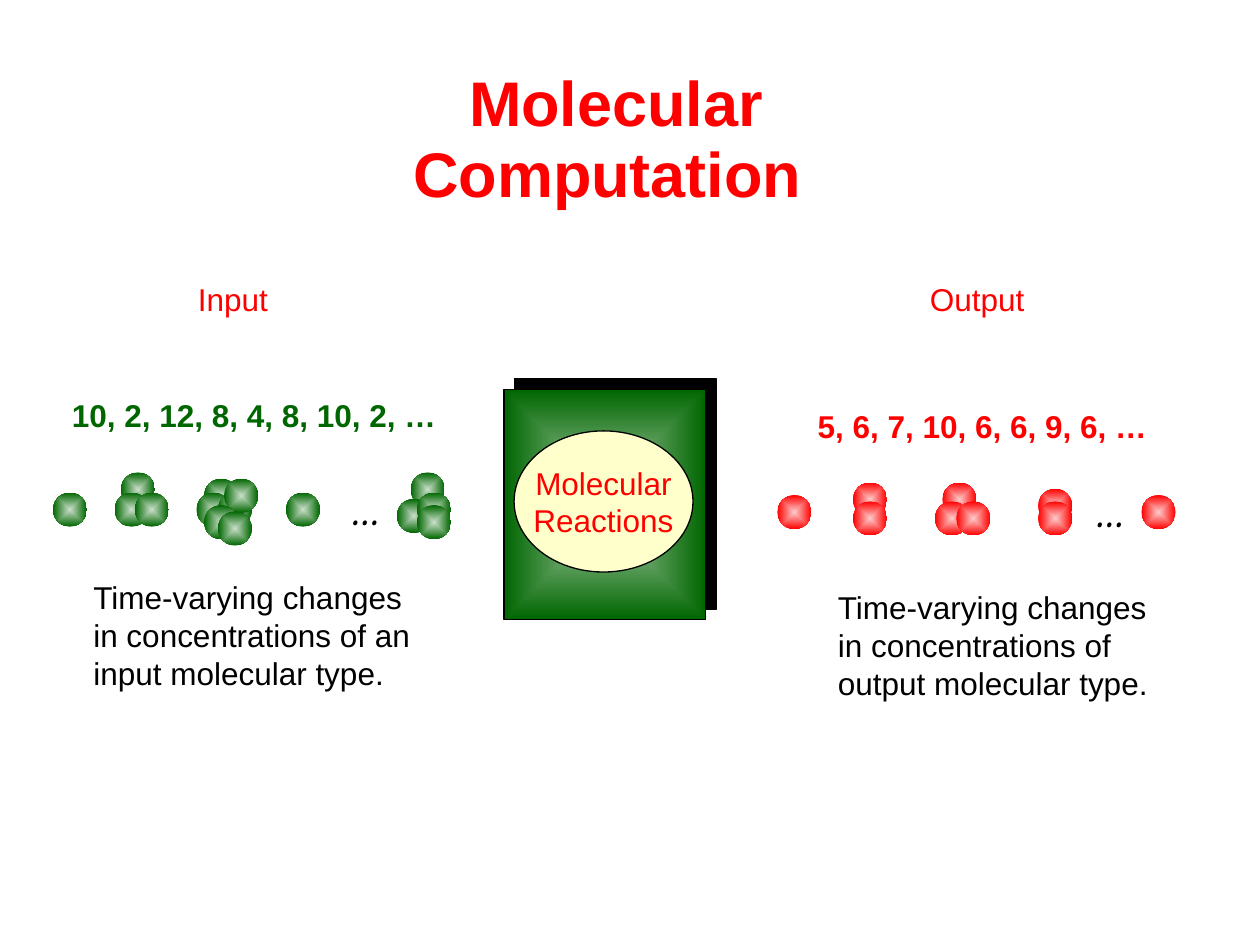
from lxml import etree
from pptx import Presentation
from pptx.dml.color import RGBColor
from pptx.enum.shapes import MSO_SHAPE
from pptx.enum.text import MSO_ANCHOR, PP_ALIGN
from pptx.oxml.ns import qn
from pptx.util import Inches, Pt

OVAL, RECT = MSO_SHAPE.OVAL, MSO_SHAPE.RECTANGLE
TOP, MIDDLE = MSO_ANCHOR.TOP, MSO_ANCHOR.MIDDLE
LEFT, CENTER = PP_ALIGN.LEFT, PP_ALIGN.CENTER

THEME = {
    "red": "FF0000", "green": "006600", "black": "000000", "cream": "FFFFCC",
    "input": ("CBDFCB", "006600"), "output": ("FECBCB", "FF0000"),
    "reactor": ("A9CBA9", "006600"),
    "font": "Arial", "symbol": "Cambria",
    "title": 36, "dots": 24, "body": 18,
}
BALL = 0.27

MOLECULES = {
    "input": {
        "balls": [
            (0.42, 3.91),
            (0.96, 3.75), (0.91, 3.91), (1.07, 3.91),
            (1.62, 3.8), (1.56, 3.91), (1.73, 3.91),
            (1.78, 3.8), (1.62, 4.01), (1.73, 4.06),
            (2.27, 3.91),
            (3.26, 3.75), (3.15, 3.96), (3.31, 3.91), (3.31, 4.01),
        ],
        "dots": (2.71, 3.91, 0.38, 0.26),
    },
    "output": {
        "balls": [
            (6.17, 3.93),
            (6.77, 3.83), (6.77, 3.98),
            (7.48, 3.83), (7.42, 3.98), (7.59, 3.98),
            (8.24, 3.88), (8.24, 3.98),
            (9.06, 3.93),
        ],
        "dots": (8.62, 3.93, 0.38, 0.25),
    },
}
TITLE = ("Molecular Computation ", (2.94, 0.49, 3.9, 0.63))
REACTOR = (4, 3.09, 1.6, 1.83)
REACTIONS = ("Molecular\vReactions", (4.08, 3.42, 1.42, 1.12))
LABELS = [
    ("Time-varying changes in concentrations of an input molecular type.",
     (0.67, 4.75, 2.78, 0.58), "black", False),
    ("Time-varying changes in concentrations of output molecular type.",
     (6.58, 4.83, 2.67, 0.58), "black", False),
    ("10, 2, 12, 8, 4, 8, 10, 2, …", (0.5, 3.08, 3.08, 0.42), "green", True),
    ("5, 6, 7, 10, 6, 6, 9, 6, …", (6.42, 3.17, 2.83, 0.42), "red", True),
    ("Input", (1.5, 2.08, 0.77, 0.58), "red", False),
    ("Output", (7.31, 2.08, 1.02, 0.58), "red", False),
]


def rgb(name):
    return RGBColor.from_string(THEME.get(name, name))


def write(sp, text, color="black", size="body", font="font", bold=False,
          italic=False, align=LEFT, anchor=MIDDLE, wrap=True, top=0.04, spacing=None):
    tf = sp.text_frame
    frame = {"word_wrap": wrap, "vertical_anchor": anchor,
             "margin_left": Inches(0.07), "margin_right": Inches(0.07),
             "margin_top": Inches(top), "margin_bottom": Inches(0.04)}
    for key, value in frame.items():
        setattr(tf, key, value)
    p = tf.paragraphs[0]
    p.text = text
    p.alignment = align
    p.line_spacing = spacing
    for r in p.runs:
        style = {"name": THEME[font], "size": Pt(THEME[size]), "bold": bold, "italic": italic}
        for key, value in style.items():
            setattr(r.font, key, value)
        r.font.color.rgb = rgb(color)


def add_label(shapes, text, box, **style):
    write(shapes.add_textbox(*map(Inches, box)), text, **style)


def add_shape(shapes, kind, box, outlined=False):
    sp = shapes.add_shape(kind, *map(Inches, box))
    sp.shadow.inherit = False
    if outlined:
        sp.line.color.rgb = rgb("black")
        sp.line.width = Pt(0.75)
    else:
        sp.line.fill.background()
    return sp


def fill_radial(sp, colors):
    sp.fill.gradient()
    for stop, color in zip(sp.fill.gradient_stops, colors):
        stop.color.rgb = rgb(color)
    grad = sp._element.spPr.find(qn("a:gradFill"))
    grad.remove(grad.find(qn("a:lin")))
    radial = etree.SubElement(grad, qn("a:path"), {"path": "shape"})
    etree.SubElement(radial, qn("a:fillToRect"), dict.fromkeys("ltrb", "50000"))


def add_offset_shadow(sp):
    effects = sp._element.spPr.find(qn("a:effectLst"))
    shadow = etree.SubElement(effects, qn("a:outerShdw"), {
        "dist": str(Pt(8.5)), "dir": str(315 * 60000), "algn": "ctr", "rotWithShape": "0"})
    etree.SubElement(shadow, qn("a:srgbClr"), {"val": THEME["black"]})


def build():
    prs = Presentation()
    prs.slide_width, prs.slide_height = Inches(10), Inches(7.5)
    s = prs.slides.add_slide(prs.slide_layouts[6])

    for side, content in MOLECULES.items():
        group = s.shapes.add_group_shape()
        for x, y in content["balls"]:
            fill_radial(add_shape(group.shapes, OVAL, (x, y, BALL, BALL)), THEME[side])
        add_label(group.shapes, "…", content["dots"], size="dots", font="symbol", italic=True)

    text, box = TITLE
    add_label(s.shapes, text, box, color="red", size="title", bold=True,
              align=CENTER, anchor=TOP, wrap=False, top=0.07, spacing=0.93)

    reactor = add_shape(s.shapes, RECT, REACTOR, outlined=True)
    fill_radial(reactor, THEME["reactor"])
    add_offset_shadow(reactor)

    text, box = REACTIONS
    reactions = add_shape(s.shapes, OVAL, box, outlined=True)
    reactions.fill.solid()
    reactions.fill.fore_color.rgb = rgb("cream")
    write(reactions, text, color="red", align=CENTER, wrap=False)

    for text, box, color, bold in LABELS:
        add_label(s.shapes, text, box, color=color, bold=bold)

    prs.save("out.pptx")


if __name__ == "__main__":
    build()
